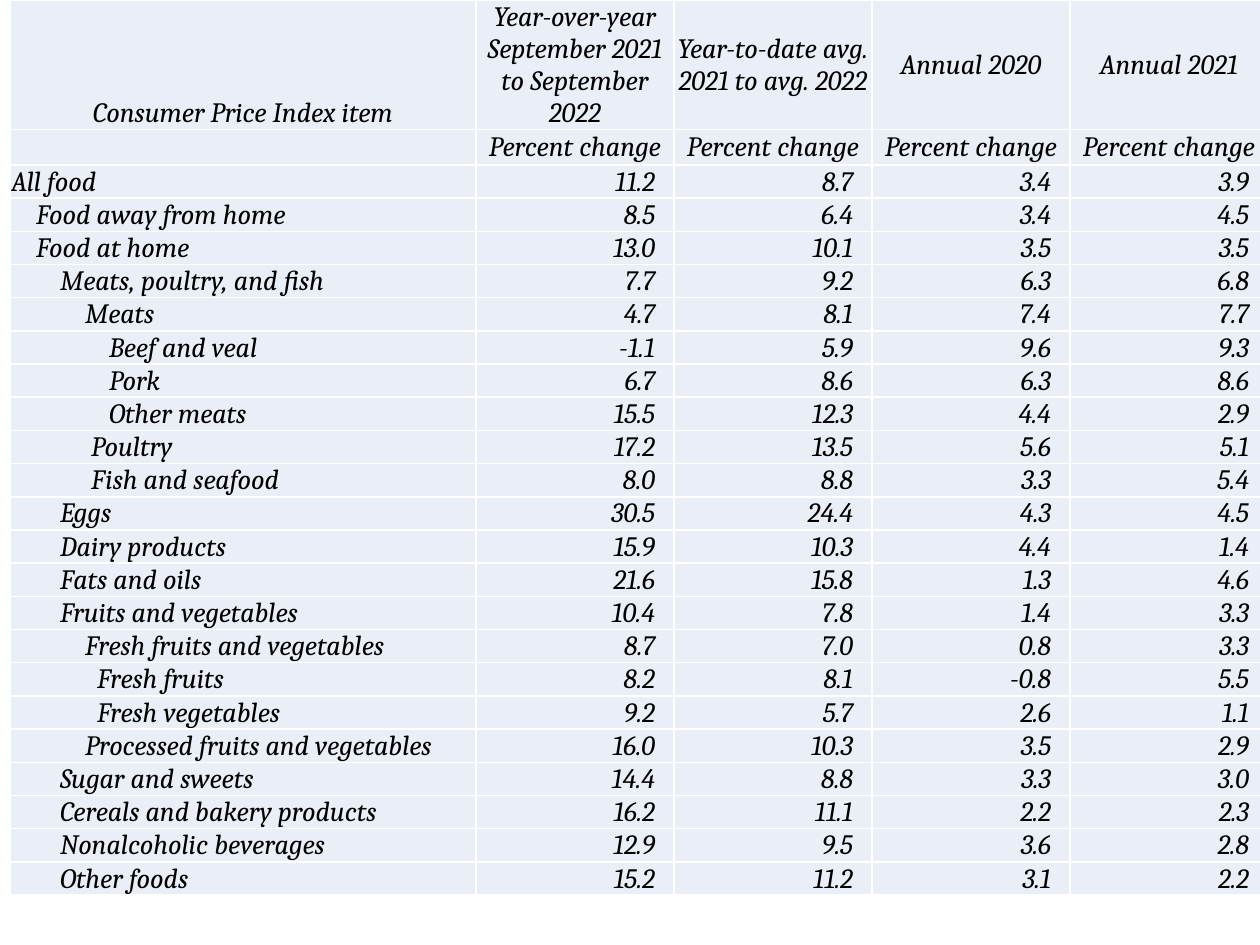
from lxml.etree import SubElement
from pptx import Presentation
from pptx.dml.color import RGBColor
from pptx.enum.text import MSO_ANCHOR, PP_ALIGN
from pptx.oxml.ns import qn
from pptx.util import Emu, Pt

SCALE = 914400 / 126
TEXT_FORMAT = {"name": "Cambria", "size": Pt(16), "italic": True}
COLUMN_WIDTHS = [466, 198, 198, 198, 198]
HEADER_HEIGHT, ROW_HEIGHT = 108, 32
VALUE_MARGIN = 19

HEADERS = [
    "Consumer Price Index item",
    "Year-over-year September 2021 to September 2022",
    "Year-to-date avg. 2021 to avg. 2022",
    "Annual 2020",
    "Annual 2021",
]
UNITS = [""] + ["Percent change"] * 4

# Left indent in px, item, percent changes
ITEMS = [
    (0, "All food", "11.2 8.7 3.4 3.9"),
    (25, "Food away from home", "8.5 6.4 3.4 4.5"),
    (25, "Food at home", "13.0 10.1 3.5 3.5"),
    (49, "Meats, poultry, and fish", "7.7 9.2 6.3 6.8"),
    (74, "Meats", "4.7 8.1 7.4 7.7"),
    (98, "Beef and veal", "-1.1 5.9 9.6 9.3"),
    (98, "Pork", "6.7 8.6 6.3 8.6"),
    (98, "Other meats", "15.5 12.3 4.4 2.9"),
    (80, "Poultry", "17.2 13.5 5.6 5.1"),
    (80, "Fish and seafood", "8.0 8.8 3.3 5.4"),
    (49, "Eggs", "30.5 24.4 4.3 4.5"),
    (49, "Dairy products", "15.9 10.3 4.4 1.4"),
    (49, "Fats and oils", "21.6 15.8 1.3 4.6"),
    (49, "Fruits and vegetables", "10.4 7.8 1.4 3.3"),
    (74, "Fresh fruits and vegetables", "8.7 7.0 0.8 3.3"),
    (86, "Fresh fruits", "8.2 8.1 -0.8 5.5"),
    (86, "Fresh vegetables", "9.2 5.7 2.6 1.1"),
    (74, "Processed fruits and vegetables", "16.0 10.3 3.5 2.9"),
    (49, "Sugar and sweets", "14.4 8.8 3.3 3.0"),
    (49, "Cereals and bakery products", "16.2 11.1 2.2 2.3"),
    (49, "Nonalcoholic beverages", "12.9 9.5 3.6 2.8"),
    (49, "Other foods", "15.2 11.2 3.1 2.2"),
]


def px(length):
    return Emu(round(length * SCALE))


def color(value):
    return RGBColor.from_string(value)


def add_borders(cell, value):
    properties = cell._tc.get_or_add_tcPr()
    for side in ("lnL", "lnR", "lnT", "lnB"):
        line = SubElement(properties, qn(f"a:{side}"), w=str(Pt(1)))
        fill = SubElement(line, qn("a:solidFill"))
        SubElement(fill, qn("a:srgbClr"), val=value)


def style_cell(cell, anchor, right):
    add_borders(cell, "FFFFFF")
    cell.fill.solid()
    cell.fill.fore_color.rgb = color("EAEFF7")
    layout = {"margin_left": px(1), "margin_top": px(1), "margin_right": px(right),
              "margin_bottom": 0, "vertical_anchor": anchor}
    for name, value in layout.items():
        setattr(cell, name, value)


def write_cell(cell, text, align, anchor=MSO_ANCHOR.BOTTOM, right=1, indent=0):
    style_cell(cell, anchor, right)
    para = cell.text_frame.paragraphs[0]
    para.alignment = align
    if indent:
        para._p.get_or_add_pPr().set("marL", str(px(indent)))
    if not text:
        # An empty cell still needs a text size to keep its row low
        SubElement(para._p, qn("a:endParaRPr"), sz="1600")
        return
    span = para.add_run()
    span.text = text
    for name, value in TEXT_FORMAT.items():
        setattr(span.font, name, value)
    span.font.color.rgb = color("000000")


def add_price_table(page):
    frame = page.shapes.add_table(len(ITEMS) + 2, len(HEADERS),
                                  px(10), 0, px(1260), px(931))
    table = frame.table
    for column, width in zip(table.columns, COLUMN_WIDTHS):
        column.width = px(width)
    for index, row in enumerate(table.rows):
        row.height = px(ROW_HEIGHT if index else HEADER_HEIGHT)

    # Two heading rows
    for row, texts in enumerate((HEADERS, UNITS)):
        for column, text in enumerate(texts):
            anchor = MSO_ANCHOR.MIDDLE if column else MSO_ANCHOR.BOTTOM
            write_cell(table.cell(row, column), text, PP_ALIGN.CENTER, anchor)

    # Items with their percent changes
    for row, (indent, item, changes) in enumerate(ITEMS, start=2):
        write_cell(table.cell(row, 0), item, PP_ALIGN.LEFT, indent=indent)
        for column, change in enumerate(changes.split(), start=1):
            write_cell(table.cell(row, column), change, PP_ALIGN.RIGHT,
                       right=VALUE_MARGIN)


def main():
    deck = Presentation()
    deck.slide_width, deck.slide_height = px(1260), px(945)
    page = deck.slides.add_slide(deck.slide_layouts[6])
    add_price_table(page)
    deck.save("out.pptx")


if __name__ == "__main__":
    main()
